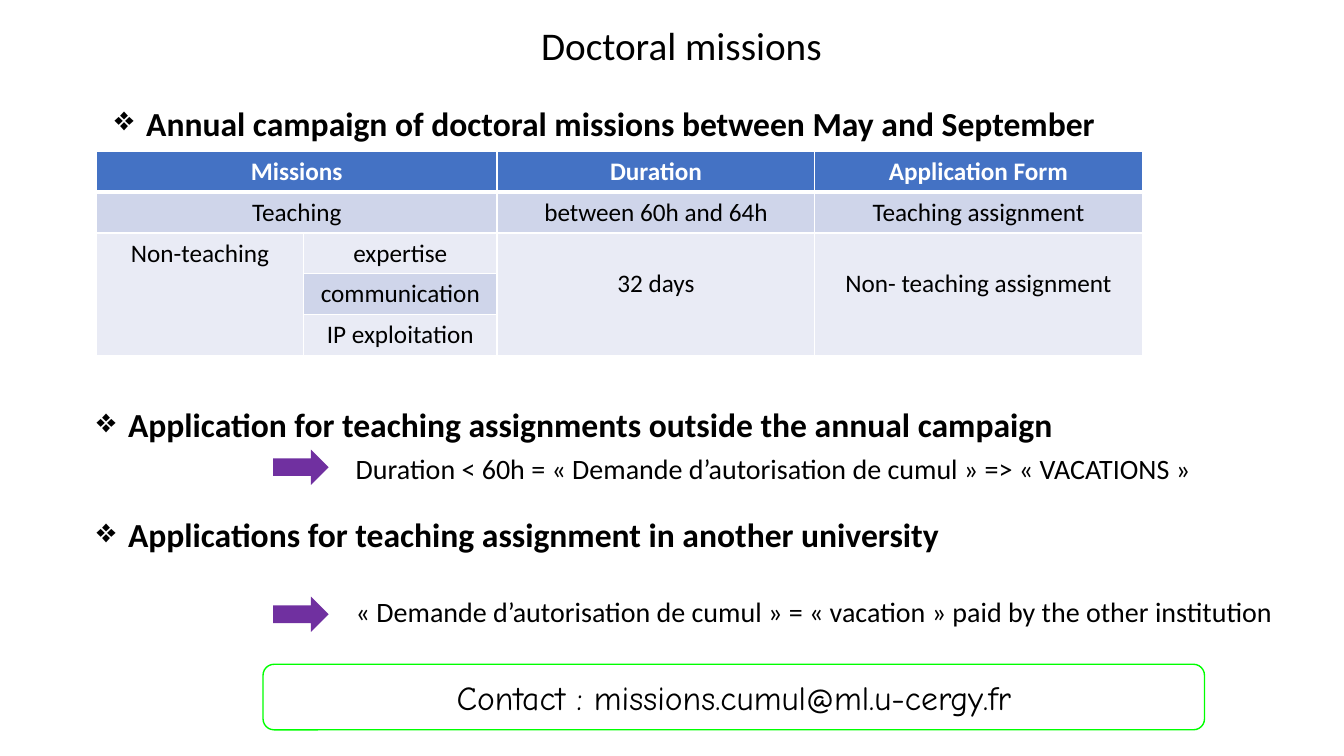
"""Builds the slide on doctoral missions, their durations and application forms."""
import pptx
import pptx.dml.color
import pptx.enum.shapes
import pptx.enum.text
import pptx.oxml
import pptx.oxml.ns
import pptx.util

Pt = pptx.util.Pt
SHAPES = pptx.enum.shapes.MSO_SHAPE
ALIGN = pptx.enum.text.PP_ALIGN
ANCHOR = pptx.enum.text.MSO_ANCHOR
COLORS = {
    "text": "000000", "paper": "FFFFFF", "header": "4472C4", "band": "CFD5EA",
    "light": "E9EBF5", "arrow": "7030A0", "frame": "00FF00",
}
MISSIONS = [
    ["Missions", None, "Duration", "Application Form"],
    ["Teaching", None, "between 60h and 64h", "Teaching assignment"],
    ["Non-teaching", "expertise", "32 days", "Non- teaching assignment"],
    [None, "communication", None, None],
    [None, "IP exploitation", None, None],
]
ROW_FILLS = ["header", "band", "light", "band", "light"]
MERGES = [(0, 0, 0, 1), (1, 0, 1, 1), (2, 0, 4, 0), (2, 2, 4, 2), (2, 3, 4, 3)]
COLUMN_WIDTHS = [147.9, 138.3, 227, 233.8]
ROW_HEIGHT = 29.2
HEADINGS = [
    (74.9, 69.8, 810.7, 116.6, "Annual campaign of doctoral missions between May and September"),
    (61.9, 285.1, 714.2, 36, "Application for teaching assignments outside the annual campaign"),
    (61.9, 363.6, 637.9, 94.3, "Applications for teaching assignment in another university"),
]
DETAILS = [
    (321.1, 319, 625.7, "Duration ˂ 60h = « Demande d’autorisation de cumul » => « VACATIONS »"),
    (426.2, 421.2, 702, "« Demande d’autorisation de cumul » = « vacation » paid by the other institution"),
]


class MissionSlide:
    """Holds the style and the current slide."""

    def __init__(self, slide, font="Calibri"):
        self.slide = slide
        self.font = font

    def color(self, name):
        return pptx.dml.color.RGBColor.from_string(COLORS[name])

    def add_words(self, frame, text, size, align=ALIGN.LEFT, bold=False, color="text", font=None):
        paragraph = frame.paragraphs[0]
        paragraph.alignment = align
        run = paragraph.add_run()
        run.text = text
        run.font.name = font or self.font
        run.font.size = Pt(size)
        run.font.bold = bold
        run.font.color.rgb = self.color(color)
        return paragraph

    def title(self, left, top, width, height, text):
        title = self.slide.shapes.title
        title.left, title.top, title.width, title.height = map(Pt, (left, top, width, height))
        frame = title.text_frame
        frame.word_wrap = False
        frame.auto_size = pptx.enum.text.MSO_AUTO_SIZE.NONE
        frame.vertical_anchor = ANCHOR.MIDDLE
        self.add_words(frame, text, 28, ALIGN.CENTER).line_spacing = 1.0

    def text(self, left, top, width, height, text, size, bold=False):
        box = self.slide.shapes.add_textbox(*map(Pt, (left, top, width, height)))
        box.text_frame.word_wrap = True
        return self.add_words(box.text_frame, text, size, bold=bold)

    def heading(self, left, top, width, height, text):
        properties = self.text(left, top, width, height, text, 24, True)._p.get_or_add_pPr()
        properties.set("marL", str(Pt(22.5)))
        properties.set("indent", str(-Pt(22.5)))
        bullet = pptx.oxml.parse_xml(
            f'<a:buChar {pptx.oxml.ns.nsdecls("a")} char="❖"/>')
        properties.append(bullet)

    def shape(self, kind, left, top, width, height, fill, line=None):
        shape = self.slide.shapes.add_shape(kind, *map(Pt, (left, top, width, height)))
        shape.shadow.inherit = False
        shape.fill.solid()
        shape.fill.fore_color.rgb = self.color(fill)
        if line:
            shape.line.color.rgb = self.color(line)
            shape.line.width = Pt(1)
        else:
            shape.line.fill.background()
        return shape

    def contact(self, left, top, width, height, text):
        frame = self.shape(SHAPES.ROUNDED_RECTANGLE, left, top, width, height,
                           "paper", "frame").text_frame
        frame.vertical_anchor = ANCHOR.MIDDLE
        self.add_words(frame, text, 24, ALIGN.CENTER, font="Comic Neue")

    def borders(self, cell, row):
        widths = {"L": 1, "R": 1, "T": 3 if row == 1 else 1, "B": 3 if row == 0 else 1}
        for side, width in widths.items():
            cell._tc.get_or_add_tcPr().append(pptx.oxml.parse_xml(
                f'<a:ln{side} {pptx.oxml.ns.nsdecls("a")} w="{Pt(width)}"><a:solidFill>'
                f'<a:srgbClr val="{COLORS["paper"]}"/></a:solidFill></a:ln{side}>'))

    def table(self, left, top):
        size = (sum(COLUMN_WIDTHS), ROW_HEIGHT * len(MISSIONS))
        table = self.slide.shapes.add_table(
            len(MISSIONS), len(COLUMN_WIDTHS), *map(Pt, (left, top, *size))).table
        for column, width in zip(table.columns, COLUMN_WIDTHS):
            column.width = Pt(width)
        for row, (texts, fill) in enumerate(zip(MISSIONS, ROW_FILLS)):
            table.rows[row].height = Pt(ROW_HEIGHT)
            for column, text in enumerate(texts):
                cell = table.cell(row, column)
                self.borders(cell, row)
                cell.fill.solid()
                cell.fill.fore_color.rgb = self.color(fill)
                if text:
                    self.add_words(cell.text_frame, text, 18, ALIGN.CENTER, row == 0,
                                   "text" if row else "paper")
        for first_row, first_column, last_row, last_column in MERGES:
            table.cell(first_row, first_column).merge(table.cell(last_row, last_column))
        for column in (2, 3):
            shared = table.cell(2, column)
            shared.vertical_anchor = ANCHOR.MIDDLE
            shared.margin_bottom = Pt(18)


def main():
    deck = pptx.Presentation()
    deck.slide_width, deck.slide_height = Pt(960), Pt(540)
    page = MissionSlide(deck.slides.add_slide(deck.slide_layouts[5]))
    page.title(378, 11.5, 217.4, 41, "Doctoral missions")
    for heading in HEADINGS:
        page.heading(*heading)
    for arrow_top, text_top, width, text in DETAILS:
        page.shape(SHAPES.RIGHT_ARROW, 195.1, arrow_top, 39.6, 25.2, "arrow")
        page.text(247, text_top, width, 31.7, text, 20)
    page.contact(187.9, 474.5, 672.5, 46.8, "Contact : missions.cumul@ml.u-cergy.fr")
    page.table(68.9, 108)
    deck.save("out.pptx")


if __name__ == "__main__":
    main()
